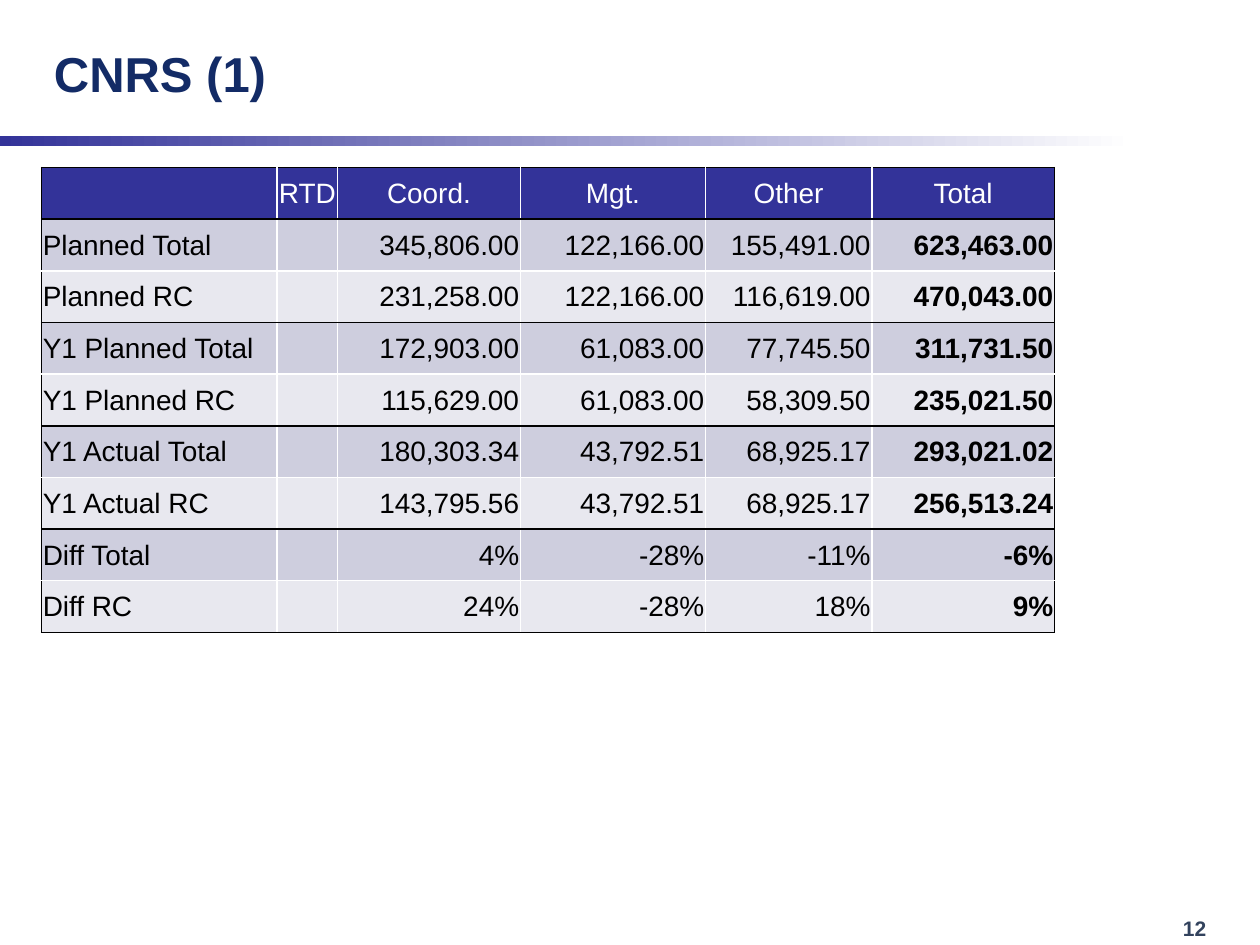
from lxml import etree
from pptx import Presentation
from pptx.dml.color import RGBColor
from pptx.enum.shapes import MSO_SHAPE
from pptx.enum.text import MSO_ANCHOR, PP_ALIGN
from pptx.oxml.ns import qn
from pptx.util import Inches, Pt

RECTANGLE = MSO_SHAPE.RECTANGLE
TOP, MIDDLE = MSO_ANCHOR.TOP, MSO_ANCHOR.MIDDLE
LEFT, CENTER, RIGHT = PP_ALIGN.LEFT, PP_ALIGN.CENTER, PP_ALIGN.RIGHT

BLACK = RGBColor(0x00, 0x00, 0x00)
WHITE = RGBColor(0xFF, 0xFF, 0xFF)
INDIGO = RGBColor(0x33, 0x33, 0x99)
NAVY = RGBColor(0x13, 0x2B, 0x66)
SLATE = RGBColor(0x32, 0x42, 0x5D)
BAND_DARK = RGBColor(0xCE, 0xCE, 0xDE)
BAND_LIGHT = RGBColor(0xE8, 0xE8, 0xEF)

COLUMN_WIDTHS = [1.87, 0.48, 1.45, 1.47, 1.32, 1.45]
ROW_HEIGHT = 0.41
BUDGET = [
    ["", "RTD", "Coord.", "Mgt.", "Other", "Total"],
    ["Planned Total", "", "345,806.00", "122,166.00", "155,491.00", "623,463.00"],
    ["Planned RC", "", "231,258.00", "122,166.00", "116,619.00", "470,043.00"],
    ["Y1 Planned Total", "", "172,903.00", "61,083.00", "77,745.50", "311,731.50"],
    ["Y1 Planned RC", "", "115,629.00", "61,083.00", "58,309.50", "235,021.50"],
    ["Y1 Actual Total", "", "180,303.34", "43,792.51", "68,925.17", "293,021.02"],
    ["Y1 Actual RC", "", "143,795.56", "43,792.51", "68,925.17", "256,513.24"],
    ["Diff Total", "", "4%", "-28%", "-11%", "-6%"],
    ["Diff RC", "", "24%", "-28%", "18%", "9%"],
]


class SlideBuilder:
    font_name = "Arial"
    table_size = 16

    def __init__(self, slide):
        self.slide = slide

    def add_run(self, paragraph, text, size, color, bold=False):
        run = paragraph.add_run()
        run.text = text
        run.font.name = self.font_name
        run.font.size = Pt(size)
        run.font.color.rgb = color
        run.font.bold = bold

    def add_text(self, box, text, size, color, anchor=TOP):
        shape = self.slide.shapes.add_textbox(*map(Inches, box))
        frame = shape.text_frame
        frame.word_wrap = True
        frame.vertical_anchor = anchor
        self.add_run(frame.paragraphs[0], text, size, color, bold=True)

    def add_gradient_bar(self, box, start, end, end_position):
        shape = self.slide.shapes.add_shape(RECTANGLE, *map(Inches, box))
        shape.shadow.inherit = False
        shape.line.fill.background()
        shape.fill.gradient()
        shape.fill.gradient_angle = 0
        first, last = shape.fill.gradient_stops
        first.position, first.color.rgb = 0, start
        last.position, last.color.rgb = end_position, end

    def set_borders(self, cell, colors):
        properties = cell._tc.get_or_add_tcPr()
        for side, color in colors.items():
            line = etree.SubElement(properties, qn(f"a:ln{side}"), w=str(Pt(1)))
            fill = etree.SubElement(line, qn("a:solidFill"))
            etree.SubElement(fill, qn("a:srgbClr"), val=str(color))

    def fill_cell(self, cell, text, row, column, last_column):
        header = row == 0
        self.set_borders(cell, {
            "L": BLACK if column == 0 else WHITE,
            "R": BLACK if column == last_column else WHITE,
            "T": BLACK if header or row % 2 else WHITE,
            "B": WHITE if row % 2 else BLACK,
        })
        cell.fill.solid()
        band = BAND_DARK if row % 2 else BAND_LIGHT
        cell.fill.fore_color.rgb = INDIGO if header else band
        cell.margin_left = cell.margin_right = cell.margin_top = Inches(0.01)
        cell.margin_bottom = 0
        cell.vertical_anchor = MIDDLE
        paragraph = cell.text_frame.paragraphs[0]
        paragraph.alignment = CENTER if header else RIGHT if column else LEFT
        if text:
            color = WHITE if header else BLACK
            bold = not header and column == last_column
            self.add_run(paragraph, text, self.table_size, color, bold)

    def add_table(self, left, top, widths, row_height, rows):
        table = self.slide.shapes.add_table(
            len(rows), len(widths), Inches(left), Inches(top),
            Inches(sum(widths)), Inches(row_height * len(rows))).table
        for column, width in zip(table.columns, widths):
            column.width = Inches(width)
        for row, texts in enumerate(rows):
            table.rows[row].height = Inches(row_height)
            for column, text in enumerate(texts):
                self.fill_cell(table.cell(row, column), text, row, column, len(widths) - 1)


def main():
    presentation = Presentation()
    presentation.slide_width = Inches(10)
    presentation.slide_height = Inches(7.5)
    builder = SlideBuilder(presentation.slides.add_slide(presentation.slide_layouts[6]))
    builder.add_text((9.29, 7.22, 0.64, 0.3), "12", 12, SLATE)
    builder.add_gradient_bar((0, 1.08, 10, 0.08), INDIGO, WHITE, 0.9)
    builder.add_text((0.33, 0.08, 7.08, 1), "CNRS (1)", 28, NAVY, MIDDLE)
    builder.add_table(0.33, 1.33, COLUMN_WIDTHS, ROW_HEIGHT, BUDGET)
    presentation.save("out.pptx")


if __name__ == "__main__":
    main()
